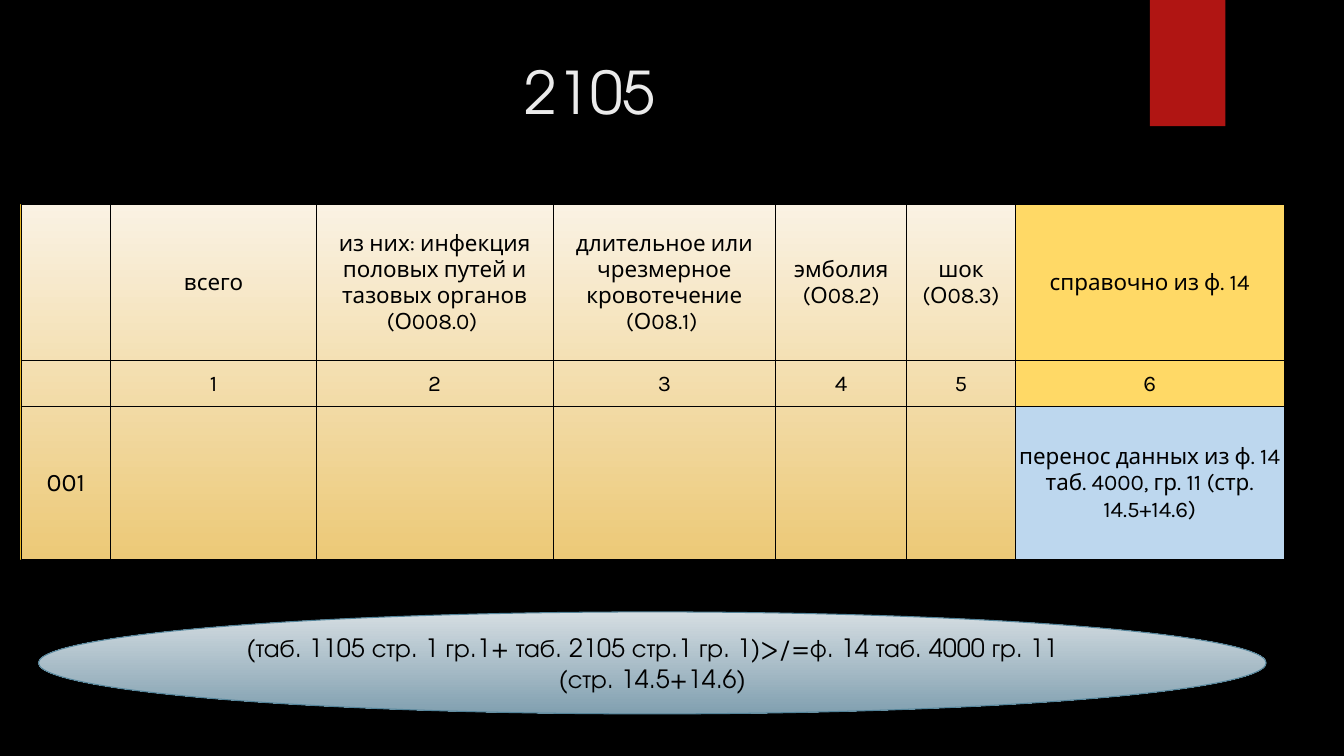
from lxml import etree
from pptx import Presentation, util as u
from pptx.dml.color import RGBColor
from pptx.enum import shapes, text
from pptx.oxml.ns import qn

HUES = {
    "back": "000000", "ink": "000000", "title": "EBEBEB", "tab": "B01513",
    "cream": "FAF2E3", "sand": "ECC977", "edge": "E6B729",
    "gold": "FFD966", "sky": "BDD7EE",
    "mist": "D5DDE2", "steel": "81A0B0", "rim": "54849A",
}
HEAD = "TeX Gyre Adventor"
BODY = "Karla"
COLS = [2.26, 5.18, 5.97, 5.61, 3.3, 2.74, 6.77]
ROWS = [3.91, 1.17, 3.86]
CELLS = [
    ["", "всего", "из них: инфекция половых путей и тазовых органов (О008.0) ",
     "длительное или чрезмерное кровотечение (О08.1) ", "эмболия (О08.2)",
     "шок (О08.3)", "справочно из ф. 14"],
    ["", "1", "2", "3", "4", "5", "6"],
    ["001", "", "", "", "", "",
     "перенос данных из ф. 14 таб. 4000, гр. 11 (стр. 14.5+14.6)"],
]
LAST = ["gold", "gold", "sky"]
RULE = "Таб"


def hue(name):
    """Return the named colour."""
    return RGBColor.from_string(HUES[name])


def write(frame, words, size, face, ink):
    """Write one centred run into a text frame."""
    frame.word_wrap = True
    line = frame.paragraphs[0]
    line.alignment = text.PP_ALIGN.CENTER
    run = line.add_run()
    run.text = words
    run.font.size = u.Pt(size)
    run.font.name = face
    run.font.color.rgb = hue(ink)


def panel(slide, kind, box, tones, edge=None):
    """Draw a shape with a plain or a downward gradient fill."""
    shape = slide.shapes.add_shape(kind, *map(u.Cm, box))
    shape.shadow.inherit = False
    if len(tones) == 1:
        shape.fill.solid()
        shape.fill.fore_color.rgb = hue(tones[0])
    else:
        shape.fill.gradient()
        shape.fill.gradient_angle = 270
        for stop, tone in zip(shape.fill.gradient_stops, tones):
            stop.color.rgb = hue(tone)
    if edge:
        shape.line.color.rgb = hue(edge)
        shape.line.width = u.Pt(0.75)
    else:
        shape.line.fill.background()
    return shape


def border(cell):
    """Give a cell thin lines on all four sides."""
    props = cell._tc.get_or_add_tcPr()
    for side in ("lnL", "lnR", "lnT", "lnB"):
        line = etree.SubElement(props, qn("a:" + side), w=str(u.Pt(0.5)))
        fill = etree.SubElement(line, qn("a:solidFill"))
        etree.SubElement(fill, qn("a:srgbClr"), val=HUES["ink"])


def header(slide, box):
    """Place the title and the red tab to its right."""
    left, top, width, height = box
    panel(slide, shapes.MSO_SHAPE.RECTANGLE,
          (left + width + 1.04, 0, 1.9, 3.18), ["tab"])
    frame = slide.shapes.add_textbox(*map(u.Cm, box)).text_frame
    frame.vertical_anchor = text.MSO_ANCHOR.TOP
    write(frame, "2105", 42, HEAD, "title")


def grid(slide, box):
    """Place the table over its gradient panel."""
    panel(slide, shapes.MSO_SHAPE.RECTANGLE, box, ["cream", "sand"], "edge")
    table = slide.shapes.add_table(
        len(ROWS), len(COLS), *map(u.Cm, box)).table
    table.first_row = table.horz_banding = False
    for col, width in zip(table.columns, COLS):
        col.width = u.Cm(width)
    for r, (height, words) in enumerate(zip(ROWS, CELLS)):
        table.rows[r].height = u.Cm(height)
        for c, word in enumerate(words):
            cell = table.cell(r, c)
            border(cell)
            cell.vertical_anchor = text.MSO_ANCHOR.MIDDLE
            cell.margin_left = cell.margin_right = cell.margin_top = u.Cm(0.03)
            cell.margin_bottom = 0
            if c == len(COLS) - 1:
                cell.fill.solid()
                cell.fill.fore_color.rgb = hue(LAST[r])
            else:
                cell.fill.background()
            if word:
                write(cell.text_frame, word, 16 if c else 18, BODY, "ink")


def check(slide, box):
    """Place the oval with the check formula."""
    oval = panel(slide, shapes.MSO_SHAPE.OVAL, box, ["mist", "steel"], "rim")
    oval.text_frame.vertical_anchor = text.MSO_ANCHOR.MIDDLE
    write(oval.text_frame,
          "(таб. 1105 стр. 1 гр.1+ таб. 2105 стр.1 гр. 1)>/=ф. 14 таб. 4000 "
          "гр. 11 (стр. 14.5+14.6)", 18, HEAD, "ink")


def main():
    """Build and save the slide."""
    deck = Presentation()
    deck.slide_width, deck.slide_height = u.Cm(33.87), u.Cm(19.05)
    slide = deck.slides.add_slide(deck.slide_layouts[6])
    slide.background.fill.solid()
    slide.background.fill.fore_color.rgb = hue("back")
    header(slide, (1.8, 1.27, 26.14, 3.89))
    grid(slide, (0.53, 5.16, sum(COLS), sum(ROWS)))
    check(slide, (0.97, 15.42, 30.94, 2.57))
    deck.save("out.pptx")


if __name__ == "__main__":
    main()
